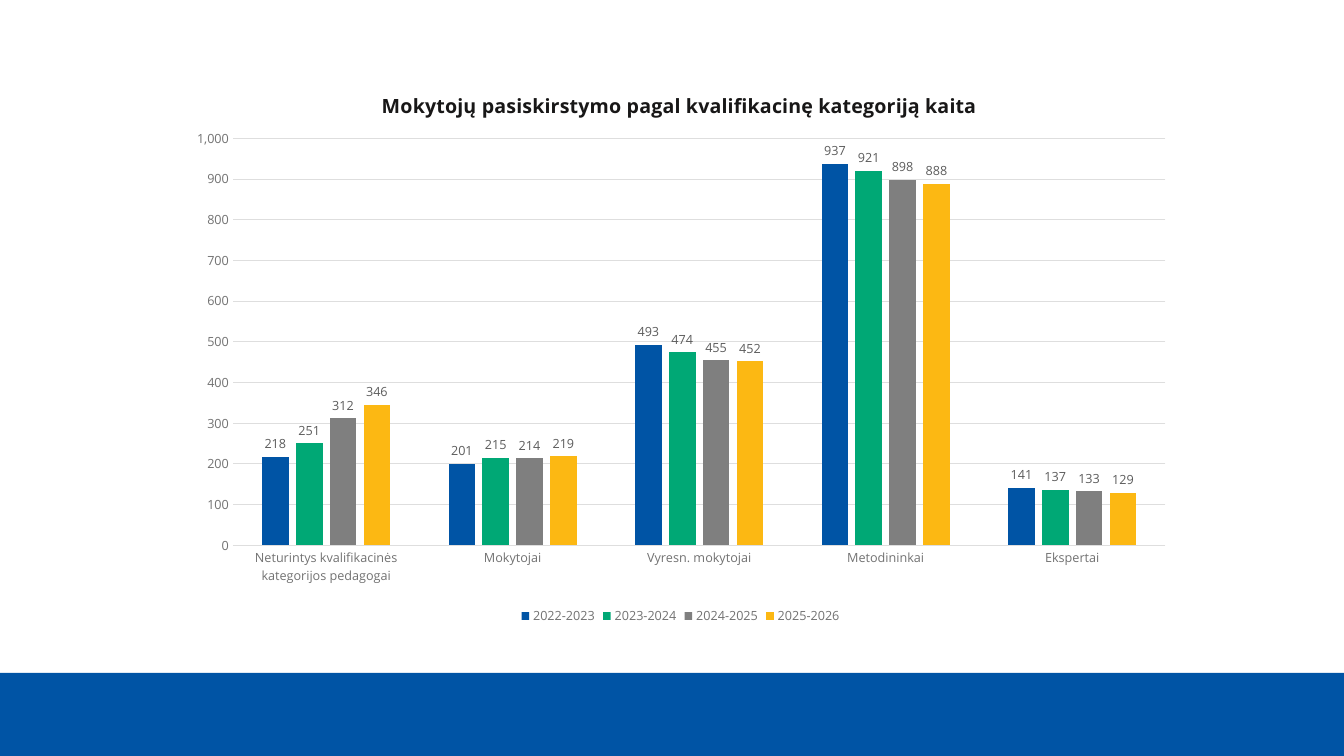
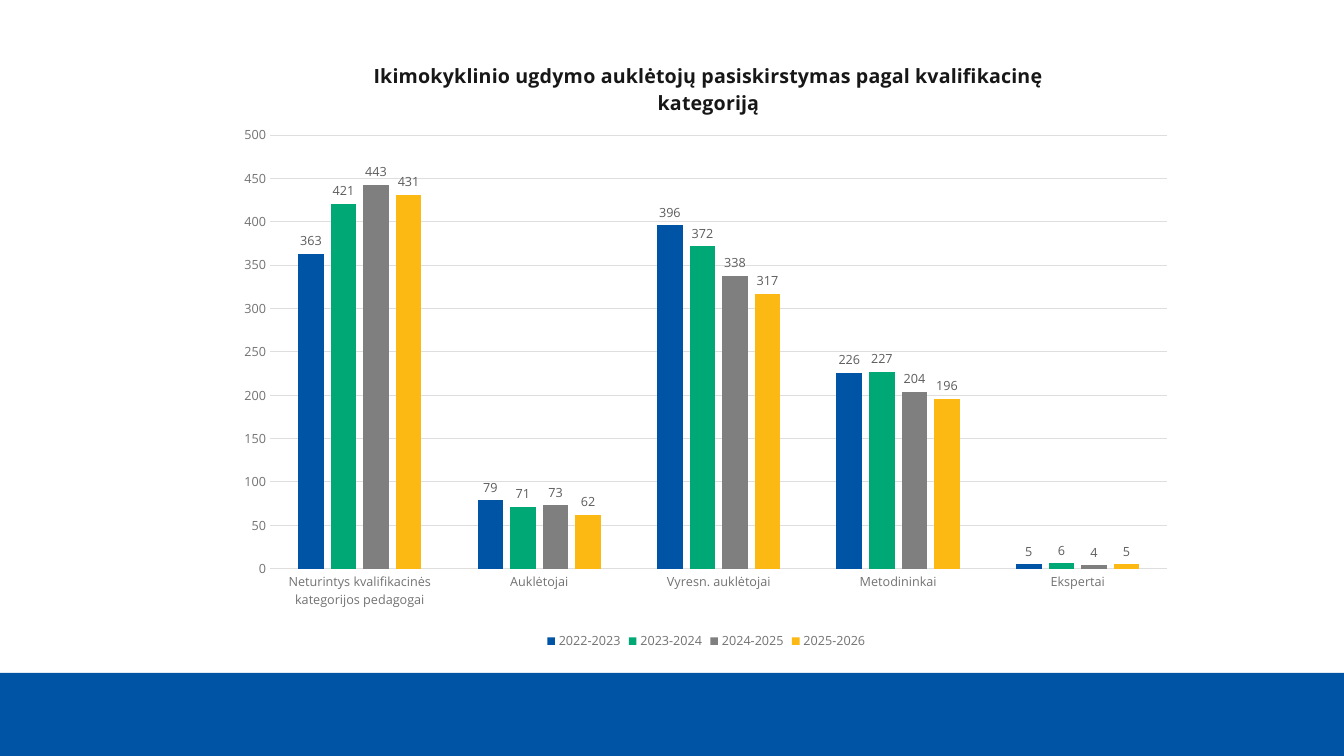
import pptx
import pptx.chart.data
import pptx.dml.color
import pptx.enum.chart
import pptx.enum.shapes
import pptx.oxml
import pptx.oxml.ns
import pptx.util

RGBColor = pptx.dml.color.RGBColor
BLUE = RGBColor(0x00, 0x54, 0xA5)
GREEN = RGBColor(0x00, 0xA8, 0x75)
GRAY = RGBColor(0x7F, 0x7F, 0x7F)
YELLOW = RGBColor(0xFC, 0xB8, 0x13)
TITLE_COLOR = RGBColor(0x18, 0x17, 0x17)
AXIS_COLOR = RGBColor(0x72, 0x72, 0x72)
LABEL_COLOR = RGBColor(0x5C, 0x5C, 0x5C)
GRID_COLOR = RGBColor(0xDE, 0xDE, 0xDE)

FONT = "Open Sans"
NUMBER_FORMAT = "#,##0"
WIDTH, HEIGHT = pptx.util.Inches(13.33), pptx.util.Inches(7.5)
BAND_TOP = 0.89
YEARS = {"2022-2023": BLUE, "2023-2024": GREEN, "2024-2025": GRAY, "2025-2026": YELLOW}
UNQUALIFIED = "Neturintys kvalifikacinės kategorijos pedagogai"


def set_font(font, size, color, bold=False):
    font.name = FONT
    font.size = pptx.util.Pt(size)
    font.bold = bold
    font.color.rgb = color


def set_line(line, color):
    line.color.rgb = color
    line.width = pptx.util.Pt(0.75)


def add_layout_band(layout, slide):
    """Draw the bottom band and move it to the layout, so every slide shows it."""
    top = int(HEIGHT * BAND_TOP)
    band = slide.shapes.add_shape(
        pptx.enum.shapes.MSO_SHAPE.RECTANGLE, 0, top, WIDTH, HEIGHT - top)
    band.shadow.inherit = False
    band.fill.solid()
    band.fill.fore_color.rgb = BLUE
    band.line.fill.background()
    layout.shapes.element.append(band.element)


def set_layout(parent, **shares):
    """Place a chart part by shares (x, y, w, h) of the chart's size."""
    target = '<c:layoutTarget val="inner"/>' if "w" in shares else ""
    modes = "".join(f'<c:{key}Mode val="edge"/>' for key in "xy")
    values = "".join(f'<c:{key} val="{share}"/>' for key, share in shares.items())
    layout = pptx.oxml.parse_xml(
        f'<c:layout {pptx.oxml.ns.nsdecls("c")}><c:manualLayout>'
        f"{target}{modes}{values}</c:manualLayout></c:layout>")
    for old_layout in parent.findall(pptx.oxml.ns.qn("c:layout")):
        parent.remove(old_layout)
    text = parent.find(pptx.oxml.ns.qn("c:tx"))
    if text is None:
        parent.insert(0, layout)
    else:
        text.addnext(layout)


def style_title(chart, title, left):
    chart.has_title = True
    run = chart.chart_title.text_frame.paragraphs[0].add_run()
    run.text = title
    set_font(run.font, 14, TITLE_COLOR, bold=True)
    chart.chart_title.include_in_layout = False
    set_layout(chart.chart_title._element, x=left, y=0.04)


def style_axes(chart, maximum):
    category_axis, value_axis = chart.category_axis, chart.value_axis
    for axis in (category_axis, value_axis):
        axis.major_tick_mark = pptx.enum.chart.XL_TICK_MARK.NONE
        axis.minor_tick_mark = pptx.enum.chart.XL_TICK_MARK.NONE
        set_font(axis.tick_labels.font, 9, AXIS_COLOR)
    set_line(category_axis.format.line, GRID_COLOR)
    value_axis.format.line.fill.background()
    value_axis.has_major_gridlines = True
    set_line(value_axis.major_gridlines.format.line, GRID_COLOR)
    value_axis.minimum_scale = 0
    value_axis.maximum_scale = maximum
    value_axis.major_unit = maximum / 10
    value_axis.tick_labels.number_format = NUMBER_FORMAT
    value_axis.tick_labels.number_format_is_linked = False


def style_columns(plot):
    plot.gap_width = 219
    plot.overlap = -27
    plot.vary_by_categories = False
    for series, color in zip(plot.series, YEARS.values()):
        series.format.fill.solid()
        series.format.fill.fore_color.rgb = color
        series.invert_if_negative = False
        labels = series.data_labels
        labels.show_value = True
        labels.number_format = NUMBER_FORMAT
        labels.number_format_is_linked = False
        labels.position = pptx.enum.chart.XL_LABEL_POSITION.OUTSIDE_END
        set_font(labels.font, 9, LABEL_COLOR)


def add_column_chart(slide, title, title_left, box, plot_box, rows, maximum):
    """Add a chart; rows map each category to its values, one per year."""
    data = pptx.chart.data.CategoryChartData(number_format=NUMBER_FORMAT)
    data.categories = list(rows)
    for year, values in zip(YEARS, zip(*rows.values())):
        data.add_series(year, values)
    chart = slide.shapes.add_chart(
        pptx.enum.chart.XL_CHART_TYPE.COLUMN_CLUSTERED,
        *(pptx.util.Inches(length) for length in box), data).chart
    set_font(chart.font, 10, AXIS_COLOR)
    style_title(chart, title, title_left)
    style_axes(chart, maximum)
    style_columns(chart.plots[0])
    set_layout(chart._chartSpace.chart.plotArea, **dict(zip("xywh", plot_box)))
    chart.has_legend = True
    chart.legend.position = pptx.enum.chart.XL_LEGEND_POSITION.BOTTOM
    chart.legend.include_in_layout = False
    set_font(chart.legend.font, 9, AXIS_COLOR)


def main():
    presentation = pptx.Presentation()
    presentation.slide_width, presentation.slide_height = WIDTH, HEIGHT
    blank = presentation.slide_layouts[6]
    teachers = presentation.slides.add_slide(blank)
    preschool = presentation.slides.add_slide(blank)
    add_layout_band(blank, teachers)
    add_column_chart(
        teachers, "Mokytojų pasiskirstymo pagal kvalifikacinę kategoriją kaita",
        0.2, (1.75, 0.64, 10, 5.6), (0.056, 0.131, 0.925, 0.721),
        {
            UNQUALIFIED: (218, 251, 312, 346),
            "Mokytojai": (201, 215, 214, 219),
            "Vyresn. mokytojai": (493, 474, 455, 452),
            "Metodininkai": (937, 921, 898, 888),
            "Ekspertai": (141, 137, 133, 129),
        }, 1000)
    add_column_chart(
        preschool,
        "Ikimokyklinio ugdymo auklėtojų pasiskirstymas pagal kvalifikacinę kategoriją",
        0.15, (2.24, 0.31, 9.53, 6.18), (0.046, 0.167, 0.934, 0.696),
        {
            UNQUALIFIED: (363, 421, 443, 431),
            "Auklėtojai": (79, 71, 73, 62),
            "Vyresn. auklėtojai": (396, 372, 338, 317),
            "Metodininkai": (226, 227, 204, 196),
            "Ekspertai": (5, 6, 4, 5),
        }, 500)
    presentation.save("out.pptx")


if __name__ == "__main__":
    main()
